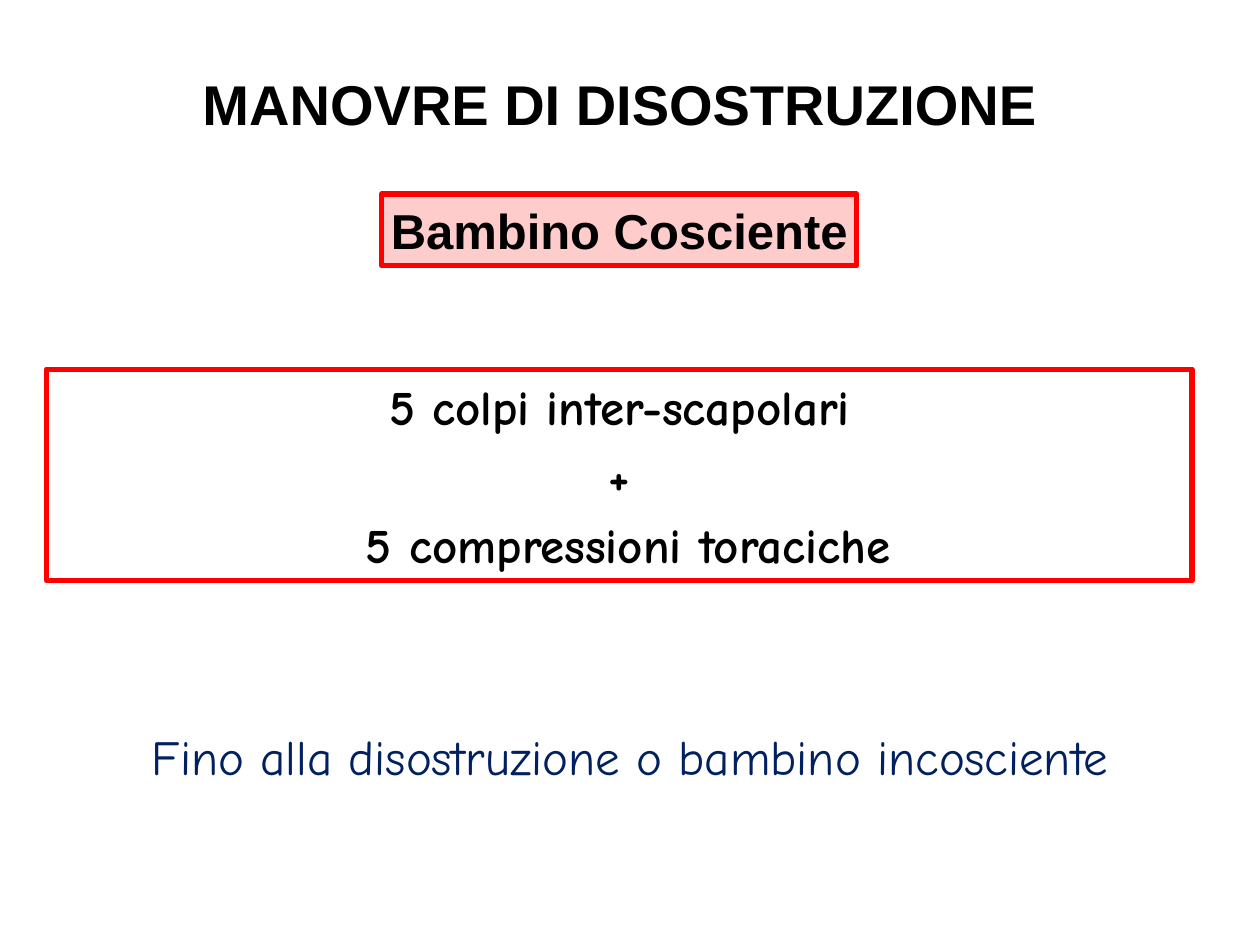
from pptx import Presentation
from pptx.dml.color import RGBColor
from pptx.enum import shapes, text
from pptx.util import Inches, Pt

BLACK = RGBColor(0x00, 0x00, 0x00)
NAVY = RGBColor(0x00, 0x20, 0x60)
RED = RGBColor(0xFF, 0x00, 0x00)
PINK = RGBColor(0xFF, 0xCC, 0xCC)

HEADING_FONT = "Arial"
BODY_FONT = "Comic Neue"


def set_text(box, lines, font, size=28, color=BLACK, bold=True,
             anchor=text.MSO_ANCHOR.TOP, wrap=True, space_before=0):
    """Fill a box with centred paragraphs in one style."""
    frame = box.text_frame
    frame.text = "\n".join(lines)
    frame.word_wrap = wrap
    frame.auto_size = text.MSO_AUTO_SIZE.SHAPE_TO_FIT_TEXT
    frame.vertical_anchor = anchor
    frame.margin_left = frame.margin_right = Inches(0.05)
    frame.margin_top = frame.margin_bottom = Inches(0.05)
    for para in frame.paragraphs:
        para.alignment = text.PP_ALIGN.CENTER
        para.space_before = Pt(space_before)
        for span in para.runs:
            span.font.name = font
            span.font.size = Pt(size)
            span.font.bold = bold
            span.font.color.rgb = color


def add_label(page, left, top, width, height, lines, font, **style):
    box = page.shapes.add_textbox(
        Inches(left), Inches(top), Inches(width), Inches(height))
    set_text(box, lines, font, **style)


def add_red_frame(page, left, top, width, height, lines, font,
                  fill=None, **style):
    box = page.shapes.add_shape(
        shapes.MSO_SHAPE.RECTANGLE,
        Inches(left), Inches(top), Inches(width), Inches(height))
    box.shadow.inherit = False
    if fill is None:
        box.fill.background()
    else:
        box.fill.solid()
        box.fill.fore_color.rgb = fill
    box.line.color.rgb = RED
    box.line.width = Pt(3)
    set_text(box, lines, font, **style)


def main():
    deck = Presentation()
    deck.slide_width = Inches(10)
    deck.slide_height = Inches(7.5)
    page = deck.slides.add_slide(deck.slide_layouts[6])

    # Manoeuvre steps
    add_red_frame(page, 0.37, 2.93, 9.09, 1.68,
                  ["5 colpi inter-scapolari", " + ",
                   " 5 compressioni toraciche"],
                  BODY_FONT, anchor=text.MSO_ANCHOR.MIDDLE, space_before=6)

    # Title
    add_label(page, 0.53, 0.5, 8.78, 0.64, ["MANOVRE DI DISOSTRUZIONE"],
              HEADING_FONT, size=32, anchor=text.MSO_ANCHOR.MIDDLE)

    # Stopping condition
    add_label(page, 0, 5.72, 10, 0.57,
              ["Fino alla disostruzione o bambino incosciente"],
              BODY_FONT, color=NAVY, bold=False)

    # Patient state
    add_red_frame(page, 3.03, 1.54, 3.77, 0.57, ["Bambino Cosciente"],
                  HEADING_FONT, fill=PINK, wrap=False)

    deck.save("out.pptx")


if __name__ == "__main__":
    main()
